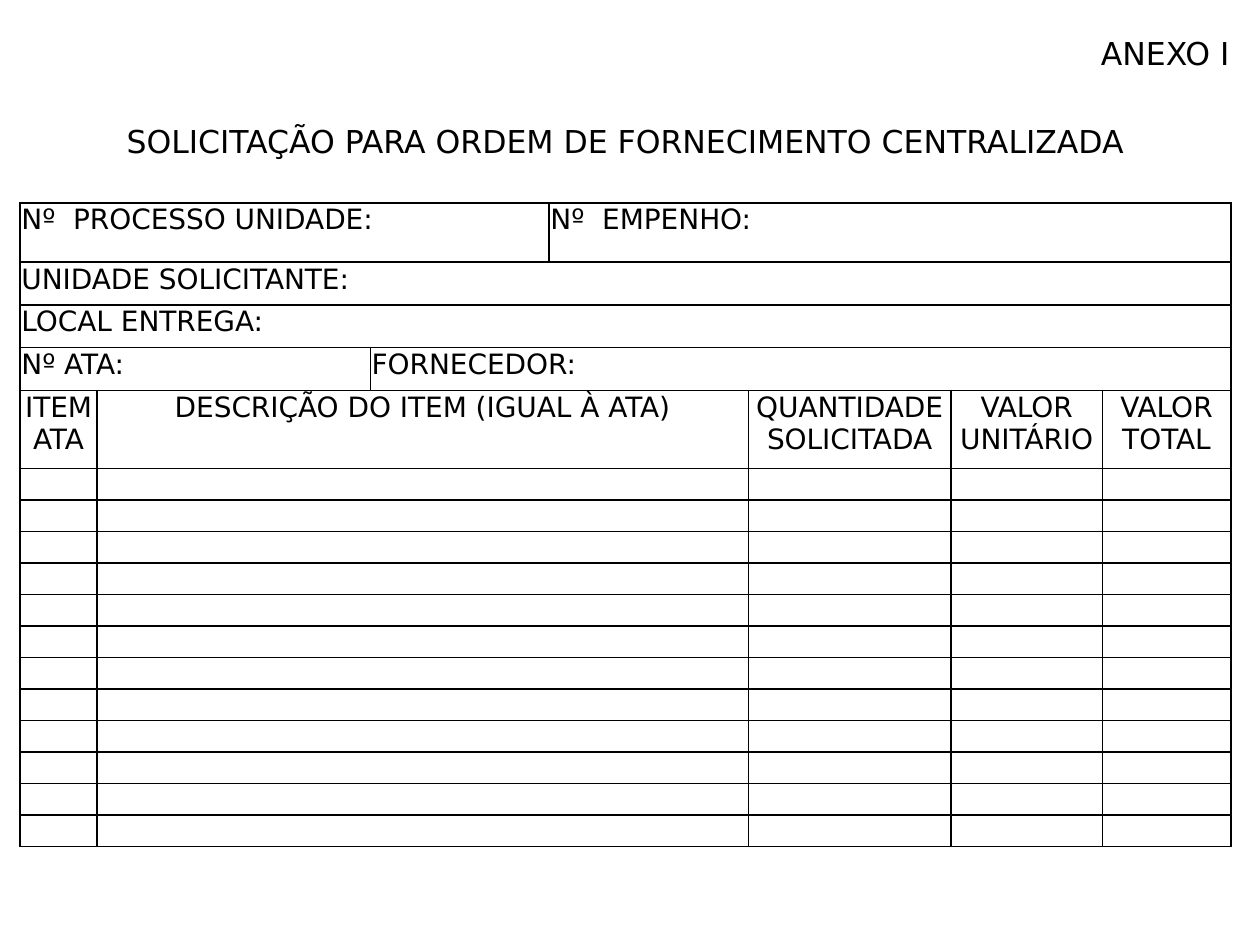
import pptx
import pptx.util
import pptx.dml.color
import pptx.enum.text
from lxml import etree
from pptx.oxml.ns import qn

BLACK = pptx.dml.color.RGBColor(0, 0, 0)
FONT = "DejaVu Sans"
NO_STYLE = "{2D5ABB26-0587-4C30-8999-92F81FD0307C}"
ALIGN = pptx.enum.text.PP_ALIGN
ANCHOR = pptx.enum.text.MSO_ANCHOR

COLS = [0.61, 2.17, 1.42, 1.58, 0.12, 1.49, 1.2, 1.02]
ITEM_ROWS = 12
ROWS = [0.35, 0.35, 0.35, 0.33, 0.47, 0.34, 0.34, 0.34, 0.62] + [0.25] * ITEM_ROWS
FORM_TOP = 4

HEADING = dict(size=18, anchor=ANCHOR.BOTTOM)
CENTRED = dict(align=ALIGN.CENTER)
SPACER = [(0, 1, ""), (1, 1, ""), (2, 1, ""), (3, 2, ""), (5, 1, ""), (6, 1, ""), (7, 1, "")]
ITEM = [(0, 1, ""), (1, 3, ""), (4, 2, ""), (6, 1, ""), (7, 1, "")]
HEADERS = ["ITEM ATA", "DESCRIÇÃO DO ITEM (IGUAL À ATA)", "QUANTIDADE SOLICITADA",
           "VALOR UNITÁRIO", "VALOR TOTAL"]

LAYOUT = [
    ([(0, 8, "ANEXO I")], dict(HEADING, align=ALIGN.RIGHT)),
    (SPACER, {}),
    ([(0, 8, "SOLICITAÇÃO PARA ORDEM DE FORNECIMENTO CENTRALIZADA")], dict(HEADING, **CENTRED)),
    (SPACER, {}),
    ([(0, 3, "Nº  PROCESSO UNIDADE:"), (3, 5, "Nº  EMPENHO:")], {}),
    ([(0, 8, "UNIDADE SOLICITANTE:")], {}),
    ([(0, 8, "LOCAL ENTREGA:")], {}),
    ([(0, 2, "Nº ATA:"), (2, 6, "FORNECEDOR:")], {}),
    ([(c, n, tx) for (c, n, _), tx in zip(ITEM, HEADERS)], CENTRED),
] + [(ITEM, {})] * ITEM_ROWS


def add_borders(cell, sides):
    """Draw 1 pt black lines on the given sides of a cell."""
    tc_pr = cell._tc.get_or_add_tcPr()
    for i, side in enumerate(sides):
        ln = etree.Element(qn("a:ln" + side), w=str(pptx.util.Pt(1)))
        fill = etree.SubElement(ln, qn("a:solidFill"))
        etree.SubElement(fill, qn("a:srgbClr"), val=str(BLACK))
        tc_pr.insert(i, ln)


def fill_cell(cell, text, size=16, align=ALIGN.LEFT, anchor=ANCHOR.TOP):
    """Write a cell's text with its margins and font."""
    margin = pptx.util.Inches(0.01)
    frame = dict(margin_left=margin, margin_right=margin, margin_top=margin,
                 margin_bottom=0, vertical_anchor=anchor)
    for name, value in frame.items():
        setattr(cell, name, value)
    p = cell.text_frame.paragraphs[0]
    p.alignment = align
    if not text:
        etree.SubElement(p._p, qn("a:endParaRPr"), sz="1000")
        return
    r = p.add_run()
    r.text = text
    for name, value in dict(name=FONT, size=pptx.util.Pt(size)).items():
        setattr(r.font, name, value)
    r.font.color.rgb = BLACK


def add_form(s):
    """Add the request form as one table."""
    box = [pptx.util.Inches(v) for v in (0.16, 0.23, sum(COLS), sum(ROWS))]
    table = s.shapes.add_table(len(ROWS), len(COLS), *box).table
    table.first_row = table.horz_banding = False
    table._tbl.tblPr.find(qn("a:tableStyleId")).text = NO_STYLE
    for col, width in zip(table.columns, COLS):
        col.width = pptx.util.Inches(width)
    for row, height in zip(table.rows, ROWS):
        row.height = pptx.util.Inches(height)
    for i, (cells, style) in enumerate(LAYOUT):
        for c, span, text in cells:
            cell = table.cell(i, c)
            if span > 1:
                cell.merge(table.cell(i, c + span - 1))
            fill_cell(cell, text, **style)
        for cell in table.rows[i].cells:
            cell.fill.background()
            add_borders(cell, "LRTB" if i >= FORM_TOP else "B" if i == FORM_TOP - 1 else "")


def main():
    """Build the slide and save it."""
    prs = pptx.Presentation()
    prs.slide_width = pptx.util.Inches(10)
    prs.slide_height = pptx.util.Inches(7.5)
    add_form(prs.slides.add_slide(prs.slide_layouts[6]))
    prs.save("out.pptx")


if __name__ == "__main__":
    main()
